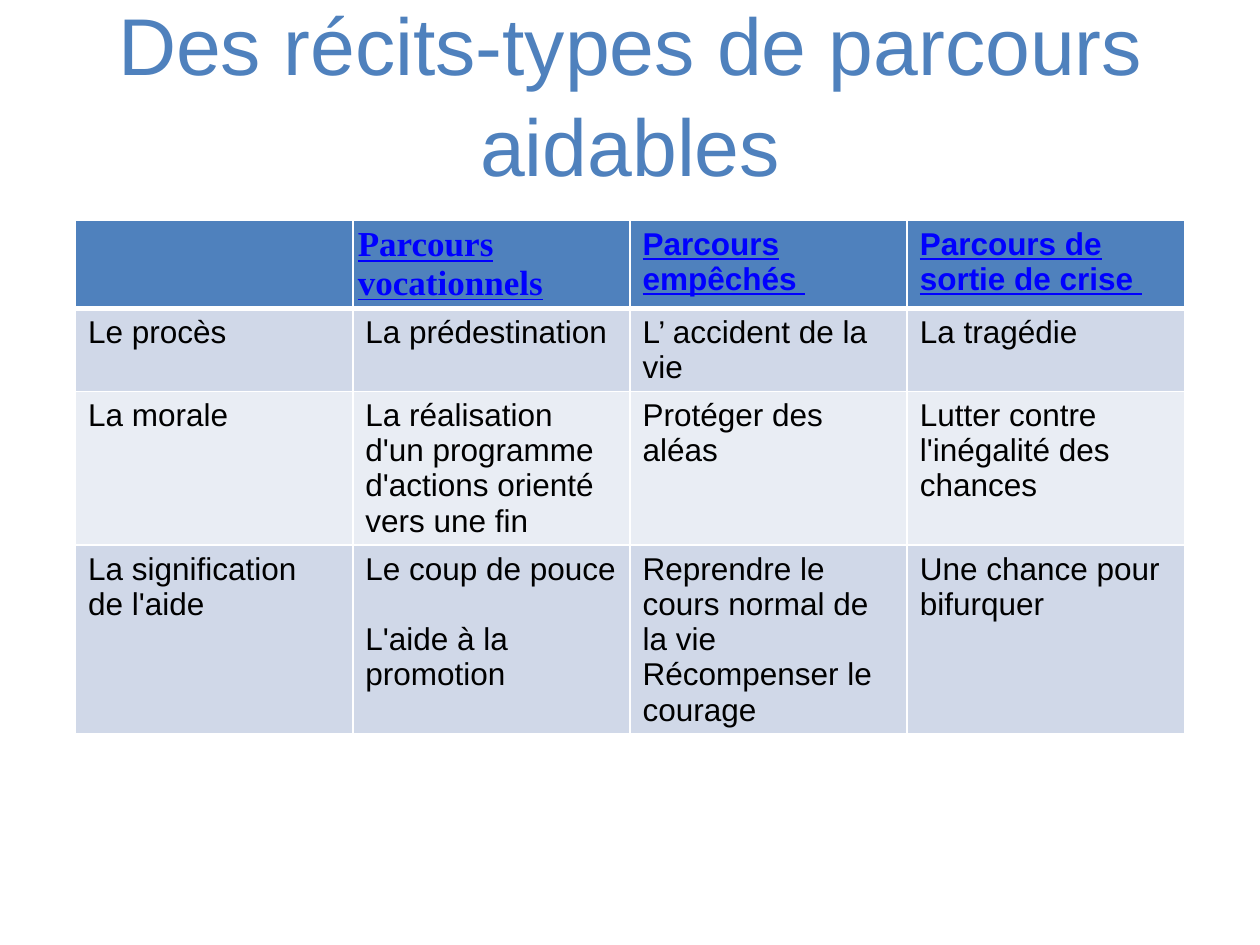
"""Build the slide on typical stories of life paths that can be helped."""
import pptx
import pptx.dml.color
import pptx.enum.text
import pptx.oxml
import pptx.oxml.ns
import pptx.util

Inches = pptx.util.Inches
Pt = pptx.util.Pt
RGBColor = pptx.dml.color.RGBColor

ACCENT = RGBColor(0x4F, 0x81, 0xBD)
LINK = RGBColor(0x00, 0x00, 0xFF)
BLACK = RGBColor(0x00, 0x00, 0x00)
WHITE = RGBColor(0xFF, 0xFF, 0xFF)
BANDS = [RGBColor(0xD0, 0xD8, 0xE8), RGBColor(0xE9, 0xED, 0xF4)]

TITLE_FONT = {"name": "Arial", "size": Pt(46)}
BODY_FONT = {"name": "Arial", "size": Pt(18), "bold": False, "underline": False}
HEADER_FONT = {"name": "Arial", "size": Pt(18), "bold": True, "underline": True}
VOCATION_FONT = {**HEADER_FONT, "name": "Times New Roman", "size": Pt(20)}
VOCATION_MARGINS = dict.fromkeys(
    ["margin_left", "margin_right", "margin_top", "margin_bottom"], Inches(0.04)
)

STORIES = [
    ["", "Parcours vocationnels", "Parcours empêchés ", "Parcours de sortie de crise "],
    ["Le procès", "La prédestination", "L’ accident de la vie", "La tragédie"],
    [
        "La morale",
        "La réalisation d'un programme d'actions orienté vers une fin",
        "Protéger des aléas",
        "Lutter contre l'inégalité des chances",
    ],
    [
        "La signification de l'aide",
        "Le coup de pouce\nL'aide à la promotion",
        "Reprendre le cours normal de la vie\nRécompenser le courage",
        "Une chance pour bifurquer",
    ],
]
ROW_HEIGHTS = [0.68, 0.66, 1.22, 1.49]


def apply_format(target, values):
    for attribute, value in values.items():
        setattr(target, attribute, value)


def add_borders(cell, widths):
    properties = cell._tc.get_or_add_tcPr()
    for position, (side, width) in enumerate(widths.items()):
        border = pptx.oxml.parse_xml(
            f'<a:{side} {pptx.oxml.ns.nsdecls("a")} w="{Pt(width)}">'
            f'<a:solidFill><a:srgbClr val="{WHITE}"/></a:solidFill></a:{side}>'
        )
        properties.insert(position, border)


deck = pptx.Presentation()
apply_format(deck, {"slide_width": Inches(10), "slide_height": Inches(7.5)})
slide = deck.slides.add_slide(deck.slide_layouts[5])

heading = slide.shapes.title
apply_format(heading, {
    "left": Inches(0.6), "top": Inches(0.12),
    "width": Inches(8.8), "height": Inches(1.46),
})
heading.text_frame.text = "Des récits-types de parcours aidables"
apply_format(heading.text_frame, {
    "vertical_anchor": pptx.enum.text.MSO_ANCHOR.BOTTOM,
    "auto_size": pptx.enum.text.MSO_AUTO_SIZE.NONE,
    "word_wrap": True,
})
heading_line = heading.text_frame.paragraphs[0]
apply_format(heading_line, {
    "alignment": pptx.enum.text.PP_ALIGN.CENTER, "line_spacing": 1.05,
})
apply_format(heading_line.runs[0].font, TITLE_FONT)
heading_line.runs[0].font.color.rgb = ACCENT

stories = slide.shapes.add_table(
    len(STORIES), len(STORIES[0]),
    Inches(0.6), Inches(1.75), Inches(8.8), Inches(sum(ROW_HEIGHTS)),
).table

for row, texts in enumerate(STORIES):
    stories.rows[row].height = Inches(ROW_HEIGHTS[row])
    is_header = row == 0
    for column, text in enumerate(texts):
        cell = stories.cell(row, column)
        is_vocation = is_header and column == 1
        cell.fill.solid()
        cell.fill.fore_color.rgb = ACCENT if is_header else BANDS[(row - 1) % 2]
        add_borders(cell, {
            "lnL": 1, "lnR": 1,
            "lnT": 3 if row == 1 else 1, "lnB": 3 if is_header else 1,
        })
        if is_vocation:
            apply_format(cell, VOCATION_MARGINS)
        cell.text = text
        font_values = HEADER_FONT if is_header else BODY_FONT
        for paragraph in cell.text_frame.paragraphs:
            for run in paragraph.runs:
                apply_format(run.font, VOCATION_FONT if is_vocation else font_values)
                run.font.color.rgb = LINK if is_header else BLACK

stories.cell(3, 1).text_frame.paragraphs[1].space_before = Pt(20)

deck.save("out.pptx")
